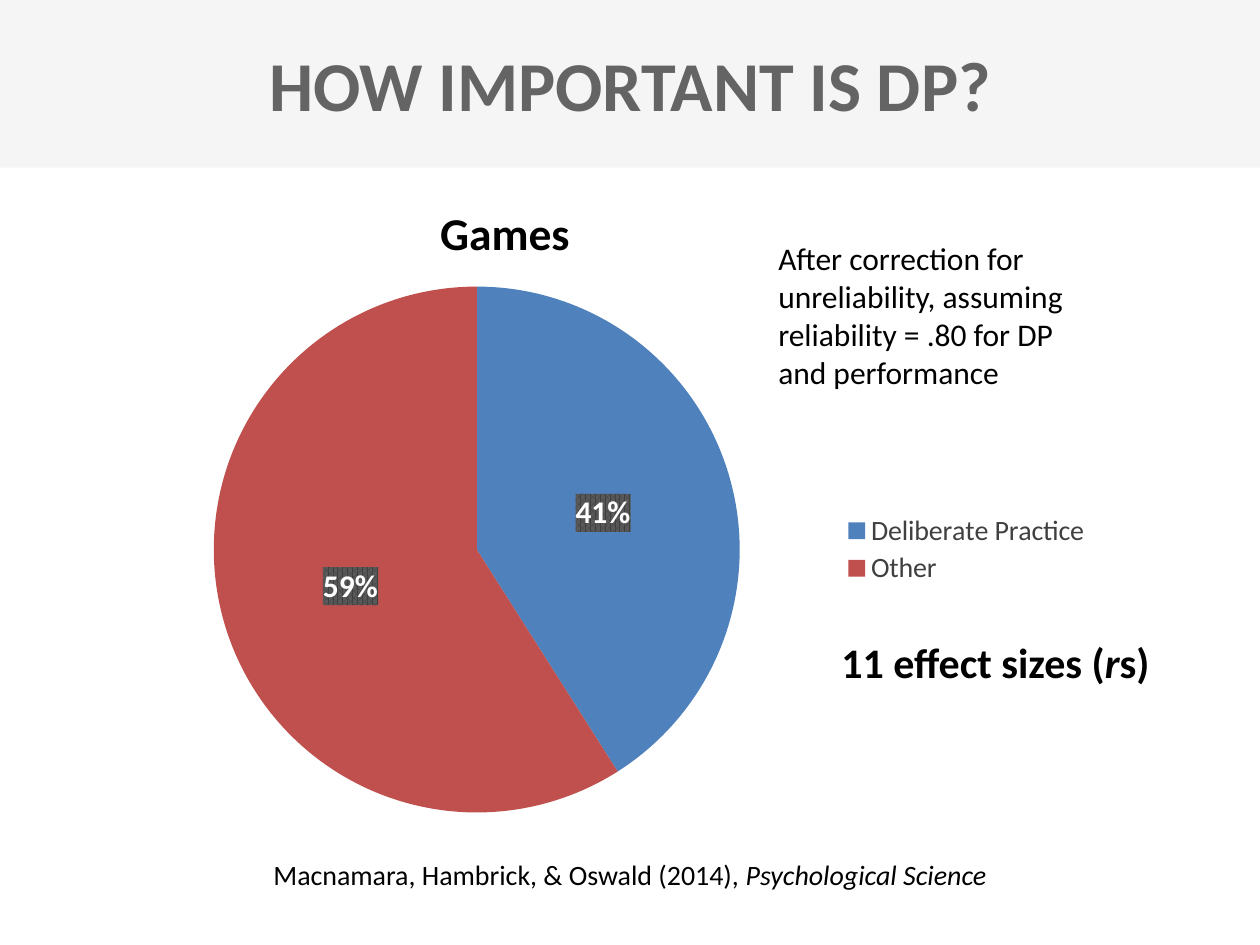
from dataclasses import dataclass

import lxml.etree
import pptx
import pptx.chart.data
import pptx.dml.color
import pptx.enum.chart
import pptx.enum.shapes
import pptx.enum.text
import pptx.oxml
import pptx.oxml.ns
import pptx.util
from pptx.util import Cm

Align = pptx.enum.text.PP_ALIGN
Anchor = pptx.enum.text.MSO_ANCHOR


@dataclass(frozen=True)
class Theme:
    font: str = "Calibri"
    band: str = "F5F5F5"
    title: str = "646464"
    ink: str = "000000"
    legend: str = "404040"
    label: str = "FFFFFF"
    label_pattern: tuple = ("404040", "595959")
    slices: tuple = ("4F81BD", "C0504D")
    title_size: int = 40
    heading_size: int = 26
    count_size: int = 24
    body_size: int = 18
    small_size: int = 16


@dataclass(frozen=True)
class Area:
    left: float
    top: float
    width: float
    height: float

    def lengths(self) -> tuple:
        return tuple(Cm(n) for n in (self.left, self.top, self.width, self.height))


@dataclass(frozen=True)
class TextBlock:
    area: Area
    spans: tuple  # pairs of text and italic
    size: int
    color: str = "000000"
    bold: bool = False
    align: Align = Align.LEFT
    anchor: Anchor = Anchor.TOP


THEME = Theme()
SLICES = {"Deliberate Practice": 41, "Other": 59}
CHART_AREA = Area(3.56, 5.44, 18.62, 11.28)
PIE_LAYOUT = {"x": 0.04, "y": 0.03, "w": 0.57, "h": 0.94}
LEGEND_LAYOUT = {"x": 0.72, "y": 0.43, "w": 0.27, "h": 0.14}

BLOCKS = (
    TextBlock(Area(0, 1.12, 25.4, 1.14), (("HOW IMPORTANT IS DP?", False),),
              THEME.title_size, THEME.title, True, Align.CENTER, Anchor.MIDDLE),
    TextBlock(Area(0, 17.17, 25.4, 0.94),
              (("Macnamara, Hambrick, & Oswald (2014), ", False),
               ("Psychological Science", True)),
              THEME.small_size, THEME.ink, align=Align.CENTER),
    TextBlock(Area(4.78, 4.01, 10.8, 1.37), (("Games", False),),
              THEME.heading_size, THEME.ink, True, Align.CENTER),
    TextBlock(Area(16.71, 12.7, 7.42, 1.27),
              (("11 effect sizes (", False), ("r", True), ("s)", False)),
              THEME.count_size, THEME.ink, True),
    TextBlock(Area(15.44, 4.7, 7.09, 3.33),
              (("After correction for unreliability, assuming "
                "reliability = .80 for DP and performance", False),),
              THEME.body_size, THEME.ink),
)


def rgb(color: str) -> pptx.dml.color.RGBColor:
    return pptx.dml.color.RGBColor.from_string(color)


def set_font(font, size: int, color: str, bold: bool = False, italic: bool = False) -> None:
    values = {"name": THEME.font, "size": pptx.util.Pt(size), "bold": bold, "italic": italic}
    for name, value in values.items():
        setattr(font, name, value)
    font.color.rgb = rgb(color)


def add_band(page, area: Area) -> None:
    band = page.shapes.add_shape(pptx.enum.shapes.MSO_SHAPE.RECTANGLE, *area.lengths())
    band.shadow.inherit = False
    band.fill.solid()
    band.fill.fore_color.rgb = rgb(THEME.band)
    band.line.fill.background()


def add_text(page, block: TextBlock) -> None:
    box = page.shapes.add_textbox(*block.area.lengths())
    box.text_frame.word_wrap = True
    box.text_frame.vertical_anchor = block.anchor
    para = box.text_frame.paragraphs[0]
    para.alignment = block.align
    for text, italic in block.spans:
        span = para.add_run()
        span.text = text
        set_font(span.font, block.size, block.color, block.bold, italic)


def manual_layout(values: dict, inner: bool = False):
    """Build a chart layout from fractions of the chart's size."""
    settings = {"layoutTarget": "inner"} if inner else {}
    settings.update(xMode="edge", yMode="edge", **values)
    parts = "".join(f'<c:{name} val="{value}"/>' for name, value in settings.items())
    return pptx.oxml.parse_xml(
        f'<c:layout {pptx.oxml.ns.nsdecls("c")}>'
        f"<c:manualLayout>{parts}</c:manualLayout></c:layout>")


def set_layout(parent, layout, before: str) -> None:
    for old in parent.findall(pptx.oxml.ns.qn("c:layout")):
        parent.remove(old)
    parent.find(pptx.oxml.ns.qn(before)).addprevious(layout)


def add_label_pattern(labels) -> None:
    front, back = THEME.label_pattern
    pattern = pptx.oxml.parse_xml(
        f'<c:spPr {pptx.oxml.ns.nsdecls("c", "a")}><a:pattFill prst="pct75">'
        f'<a:fgClr><a:srgbClr val="{front}"/></a:fgClr>'
        f'<a:bgClr><a:srgbClr val="{back}"/></a:bgClr></a:pattFill></c:spPr>')
    labels.find(pptx.oxml.ns.qn("c:txPr")).addprevious(pattern)


def add_pie(page) -> None:
    data = pptx.chart.data.CategoryChartData()
    data.categories = list(SLICES)
    data.add_series("Series 1", list(SLICES.values()))
    chart = page.shapes.add_chart(
        pptx.enum.chart.XL_CHART_TYPE.PIE, *CHART_AREA.lengths(), data).chart
    chart.has_title = False
    set_font(chart.font, 10, THEME.ink)

    # Slices
    plot = chart.plots[0]
    plot.vary_by_categories = True
    series = plot.series[0]
    for index, color in enumerate(THEME.slices):
        fill = series.points[index].format.fill
        fill.solid()
        fill.fore_color.rgb = rgb(color)

    # Percent labels
    labels = series.data_labels
    values = {"show_percentage": True, "show_value": False, "show_legend_key": False,
              "number_format": "0%", "number_format_is_linked": False,
              "position": pptx.enum.chart.XL_LABEL_POSITION.CENTER}
    for name, value in values.items():
        setattr(labels, name, value)
    set_font(labels.font, THEME.body_size, THEME.label, True)
    add_label_pattern(series.data_labels._element)

    # Legend and plot placement
    chart.has_legend = True
    legend = chart.legend
    legend.position = pptx.enum.chart.XL_LEGEND_POSITION.RIGHT
    legend.include_in_layout = False
    set_font(legend.font, THEME.small_size, THEME.legend)
    set_layout(legend._element, manual_layout(LEGEND_LAYOUT), "c:overlay")
    set_layout(plot._element.getparent(), manual_layout(PIE_LAYOUT, True), "c:pieChart")


def main() -> None:
    deck = pptx.Presentation()
    deck.slide_width, deck.slide_height = Cm(25.4), Cm(19.05)
    page = deck.slides.add_slide(deck.slide_layouts[6])
    add_band(page, Area(0, 0, 25.4, 3.38))
    add_pie(page)
    for block in BLOCKS:
        add_text(page, block)
    deck.save("out.pptx")


if __name__ == "__main__":
    main()
